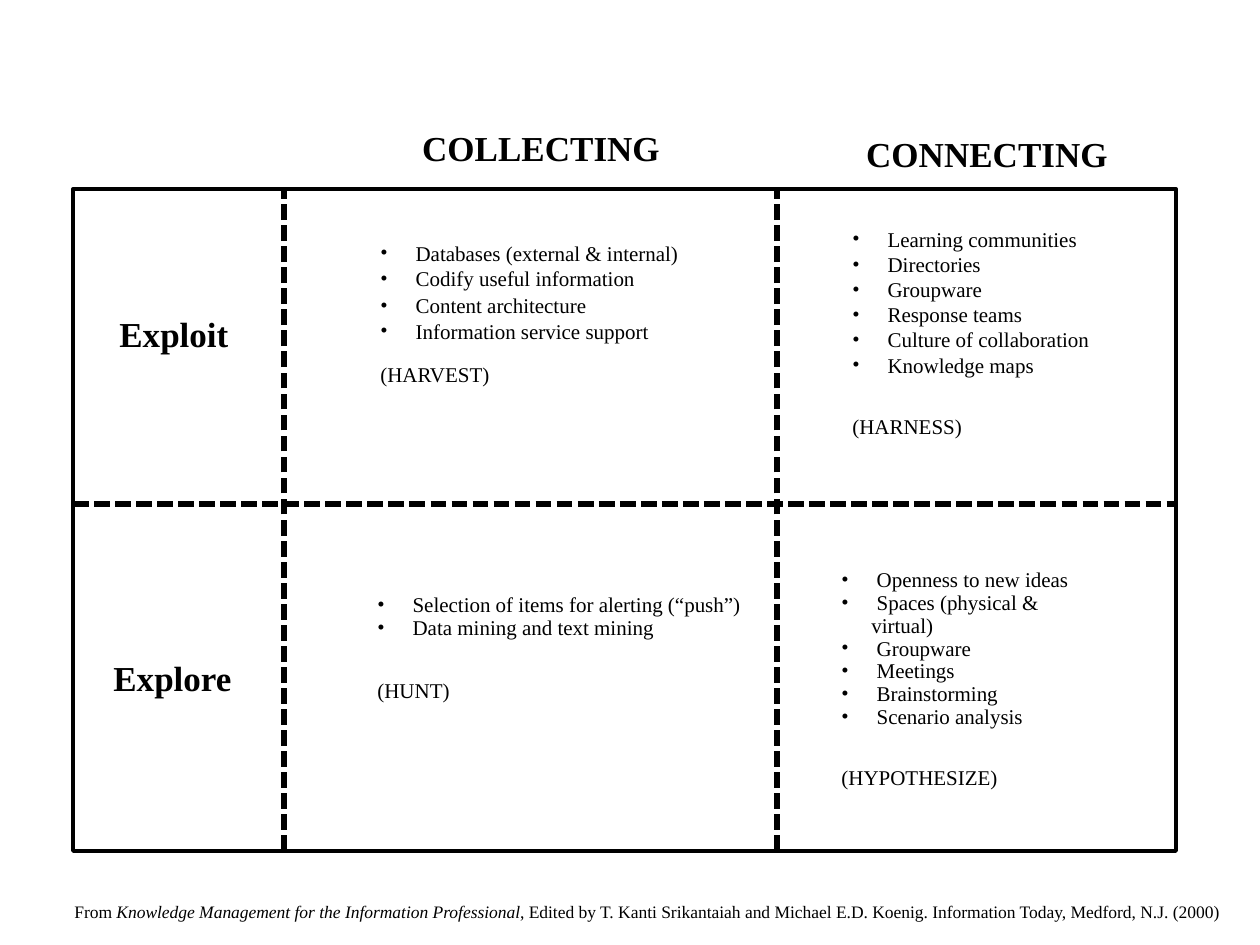
from lxml.etree import SubElement
from pptx import Presentation
from pptx.dml.color import RGBColor
from pptx.enum.dml import MSO_LINE
from pptx.enum.shapes import MSO_CONNECTOR, MSO_SHAPE
from pptx.enum.text import MSO_AUTO_SIZE, PP_ALIGN
from pptx.oxml.ns import qn
from pptx.util import Emu, Pt

PIXELS_PER_INCH = 126
COLORS = {"ink": "000000"}
FONT = "Times New Roman"
HEADING = {"size": Pt(20), "bold": True}
BODY = {"size": Pt(12)}
CITATION = {"size": Pt(10)}
BULLET_INDENT = 30

FRAME = (73, 189, 1103, 662)
COLUMN_EDGES = (284, 777)
ROW_EDGE = 504

HEADINGS = [
    ("COLLECTING", (305, 120, 472, 55), PP_ALIGN.CENTER),
    ("CONNECTING", (798, 126, 378, 55), PP_ALIGN.CENTER),
    ("Exploit", (107, 306, 175, 55), PP_ALIGN.LEFT),
    ("Explore", (101, 650, 175, 55), PP_ALIGN.LEFT),
]

QUADRANTS = [
    {"box": (368, 234, 357, 165), "pitch": 14.4, "label": "(HARVEST)", "label_gap": 10.2,
     "items": ["Databases (external & internal)", "Codify useful information",
               "Content architecture", "Information service support"],
     "gaps": {2: 1.4}},
    {"box": (840, 220, 316, 230), "pitch": 14.4, "label": "(HARNESS)", "label_gap": 20.5,
     "items": ["Learning communities", "Directories", "Groupware", "Response teams",
               "Culture of collaboration", "Knowledge maps"]},
    {"box": (365, 588, 454, 122), "pitch": 13, "label": "(HUNT)", "label_gap": 23,
     "items": ["Selection of items for alerting (“push”)", "Data mining and text mining"]},
    {"box": (829, 563, 281, 235), "pitch": 13, "label": "(HYPOTHESIZE)", "label_gap": 21.9,
     "items": ["Openness to new ideas", "Spaces (physical & virtual)", "Groupware",
               "Meetings", "Brainstorming", "Scenario analysis"]},
]

SOURCE_RUNS = [
    ("From ", False),
    ("Knowledge Management for the Information Professional", True),
    (", Edited by T. Kanti Srikantaiah and Michael E.D. Koenig. "
     "Information Today, Medford, N.J. (2000)", False),
]


def px(length):
    return Emu(round(length * 914400 / PIXELS_PER_INCH))


def apply_format(target, values):
    for name, value in values.items():
        setattr(target, name, value)


def add_run(paragraph, text, style, italic=False):
    run = paragraph.add_run()
    run.text = text
    apply_format(run.font, {"name": FONT, "italic": italic, **style})
    run.font.color.rgb = RGBColor.from_string(COLORS["ink"])


def add_text_frame(slide, box):
    text_frame = slide.shapes.add_textbox(*map(px, box)).text_frame
    apply_format(text_frame, {"word_wrap": True, "auto_size": MSO_AUTO_SIZE.SHAPE_TO_FIT_TEXT})
    return text_frame


def add_heading(slide, text, box, alignment):
    paragraph = add_text_frame(slide, box).paragraphs[0]
    paragraph.alignment = alignment
    add_run(paragraph, text, HEADING)


def add_bullet(paragraph):
    properties = paragraph._p.get_or_add_pPr()
    properties.set("marL", str(px(BULLET_INDENT)))
    properties.set("indent", str(-px(BULLET_INDENT)))
    SubElement(properties, qn("a:buFont")).set("typeface", FONT)
    SubElement(properties, qn("a:buChar")).set("char", "•")


def add_quadrant(slide, box, pitch, items, label, label_gap, gaps={}):
    text_frame = add_text_frame(slide, box)
    for index, item in enumerate(items):
        paragraph = text_frame.add_paragraph() if index else text_frame.paragraphs[0]
        add_bullet(paragraph)
        apply_format(paragraph, {"line_spacing": Pt(pitch), "space_before": Pt(gaps.get(index, 0))})
        add_run(paragraph, f" {item}", BODY)
    paragraph = text_frame.add_paragraph()
    apply_format(paragraph, {"line_spacing": Pt(pitch), "space_before": Pt(label_gap)})
    add_run(paragraph, label, BODY)


def add_frame(slide):
    shape = slide.shapes.add_shape(MSO_SHAPE.RECTANGLE, *map(px, FRAME))
    shape.shadow.inherit = False
    shape.fill.background()
    shape.line.color.rgb = RGBColor.from_string(COLORS["ink"])
    shape.line.width = Pt(2.25)


def add_divider(slide, start, end):
    connector = slide.shapes.add_connector(MSO_CONNECTOR.STRAIGHT, *map(px, start + end))
    connector.line.color.rgb = RGBColor.from_string(COLORS["ink"])
    apply_format(connector.line, {"width": Pt(3), "dash_style": MSO_LINE.SQUARE_DOT})
    SubElement(connector._element.spPr, qn("a:effectLst"))


def add_source(slide):
    paragraph = add_text_frame(slide, (62, 893, 1197, 37)).paragraphs[0]
    paragraph.line_spacing = 1.1
    for text, italic in SOURCE_RUNS:
        add_run(paragraph, text, CITATION, italic)


def main():
    presentation = Presentation()
    apply_format(presentation, {"slide_width": px(1260), "slide_height": px(945)})
    slide = presentation.slides.add_slide(presentation.slide_layouts[6])
    for heading in HEADINGS:
        add_heading(slide, *heading)
    for quadrant in QUADRANTS:
        add_quadrant(slide, **quadrant)
    add_frame(slide)
    left, top, width, height = FRAME
    for x in COLUMN_EDGES:
        add_divider(slide, (x, top + height), (x, top))
    add_divider(slide, (left, ROW_EDGE), (left + width, ROW_EDGE))
    add_source(slide)
    presentation.save("out.pptx")


if __name__ == "__main__":
    main()
